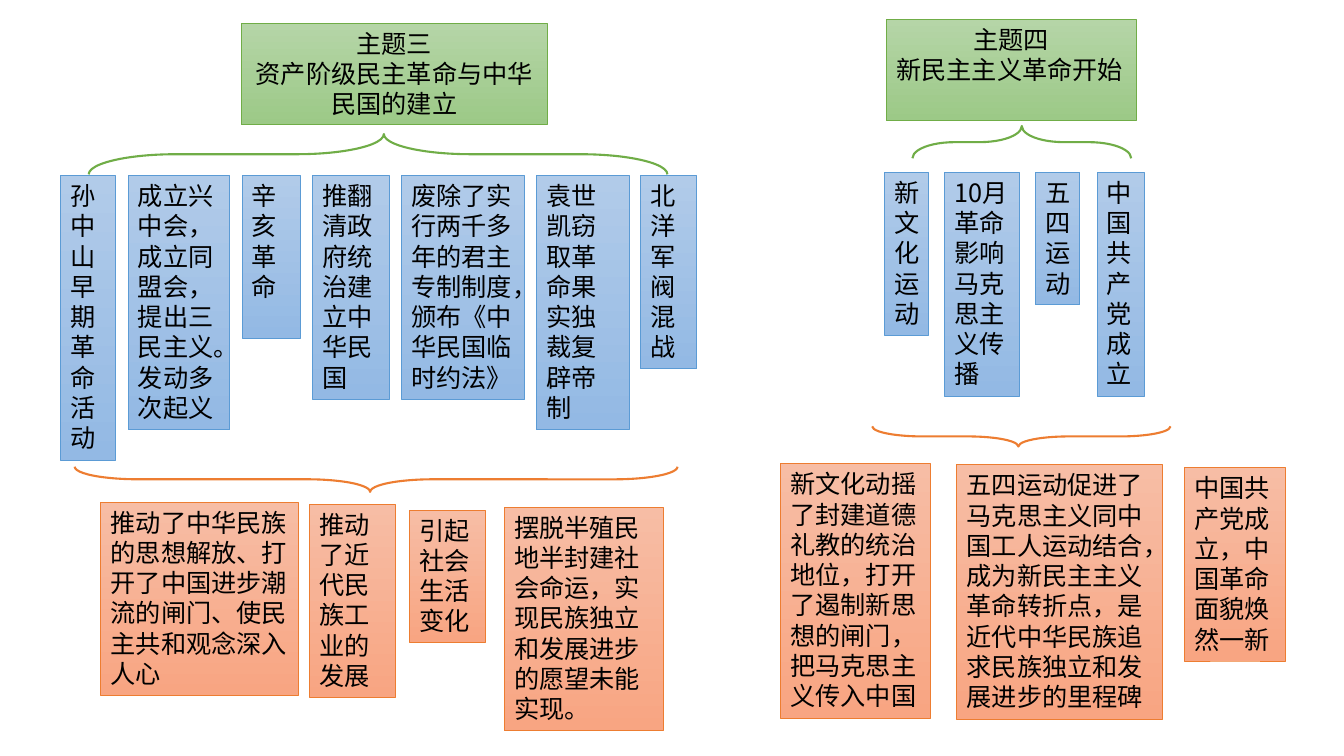
from pptx import Presentation
from pptx.dml.color import RGBColor
from pptx.enum.shapes import MSO_SHAPE as SHAPE
from pptx.enum.text import MSO_ANCHOR as ANCHOR, MSO_AUTO_SIZE as AUTO, PP_ALIGN as ALIGN
from pptx.oxml.ns import qn
from pptx.util import Inches, Pt

FONT = "Noto Sans CJK SC"
LINE_HEIGHT, PADDING = 0.303, 0.1

# Colours: gradient top, gradient bottom, outline
GREEN = ("B5D5A7", "9CC987", "70AD47")
BLUE = ("B1CBE9", "93B9E4", "5B9BD5")
ORANGE = ("F7BDA5", "F8A582", "ED7D31")

# Topics: left, top, width, paragraphs with their alignment
TOPICS = [
    (2.39, 0.23, 3.04, [("主题三", ALIGN.CENTER),
                        ("资产阶级民主革命与中华民国的建立", ALIGN.CENTER)]),
    (8.79, 0.19, 2.48, [("主题四", ALIGN.CENTER),
                        ("新民主主义革命开始", ALIGN.LEFT)]),
]
TOPIC_LINES = 3

# Events, by row top: left, width, height in lines, paragraphs
EVENTS = {
    1.74: [
        (0.6, 0.54, 9, ["孙中山早期革命活动"]),
        (1.27, 1.01, 8, ["成立兴中会，", "成立同盟会，", "提出三民主义。", "发动多次起义"]),
        (2.4, 0.58, 5, ["辛亥革命"]),
        (3.1, 0.76, 7, ["推翻清政府统治建立中华民国"]),
        (3.98, 1.22, 7, ["废除了实行两千多年的君主专制制度，颁布《中华民国临时约法》"]),
        (5.32, 0.92, 8, ["袁世凯窃取革命果实独裁复辟帝制"]),
        (6.35, 0.56, 6, ["北洋军阀混战"]),
    ],
    1.71: [
        (8.77, 0.44, 5, ["新文化运动"]),
        (9.37, 0.74, 7, ["10月革命影响马克思主义传播"]),
        (10.27, 0.44, 4, ["五四运动"]),
        (10.88, 0.47, 7, ["中国共产党成立"]),
    ],
}

# Effects: left, top, width, height in lines, text
EFFECTS = [
    (1, 4.98, 1.96, 6, "推动了中华民族的思想解放、打开了中国进步潮流的闸门、使民主共和观念深入人心"),
    (3.07, 5, 0.85, 6, "推动了近代民族工业的发展"),
    (4.06, 5.06, 0.75, 4, "引起社会生活变化"),
    (5, 5.03, 1.58, 7, "摆脱半殖民地半封建社会命运，实现民族独立和发展进步的愿望未能实现。"),
    (7.74, 4.6, 1.49, 8, "新文化动摇了封建道德礼教的统治地位，打开了遏制新思想的闸门，把马克思主义传入中国"),
    (9.49, 4.61, 2.04, 8, "五四运动促进了马克思主义同中国工人运动结合，成为新民主主义革命转折点，"
                          "是近代中华民族追求民族独立和发展进步的里程碑"),
    (11.75, 4.64, 1, 6, "中国共产党成立，中国革命面貌焕然一新"),
]

# Braces as seen: left, top, length, depth, rotation, curve, tip position, palette
BRACES = [
    (0.88, 1.33, 5.74, 0.4, 270, 2.16, 0.51, GREEN),
    (9.05, 1.25, 2.17, 0.32, 270, 1.31, 0.5, GREEN),
    (0.74, 4.63, 5.98, 0.25, 90, 2.5, 0.51, ORANGE),
    (8.65, 4.23, 2.96, 0.2, 90, 2.5, 0.51, ORANGE),
]


def rgb(value):
    return RGBColor.from_string(value)


def add_box(slide, left, top, width, lines, paragraphs, palette):
    height = PADDING + lines * LINE_HEIGHT
    sp = slide.shapes.add_shape(SHAPE.RECTANGLE, Inches(left), Inches(top),
                                Inches(width), Inches(height))
    sp.shadow.inherit = False
    sp.fill.gradient()
    sp.fill.gradient_angle = 270
    for stop, color in zip(sp.fill.gradient_stops, palette):
        stop.color.rgb = rgb(color)
    sp.line.color.rgb = rgb(palette[2])
    sp.line.width = Pt(0.5)

    tf = sp.text_frame
    tf.word_wrap = True
    tf.auto_size = AUTO.NONE
    tf.vertical_anchor = ANCHOR.TOP
    for i, (text, alignment) in enumerate(paragraphs):
        p = tf.add_paragraph() if i else tf.paragraphs[0]
        p.alignment = alignment
        r = p.add_run()
        r.text = text
        r.font.name = FONT
        r.font.size = Pt(18)
        r.font.color.rgb = rgb("000000")
        # East Asian typeface
        ea = r.font._element.makeelement(qn("a:ea"), {"typeface": FONT})
        r.font._element.find(qn("a:latin")).addnext(ea)


def add_brace(slide, left, top, length, depth, rotation, curve, tip, palette):
    # The frame is upright before it turns about its centre
    shift = (length - depth) / 2
    sp = slide.shapes.add_shape(SHAPE.RIGHT_BRACE, Inches(left + shift), Inches(top - shift),
                                Inches(depth), Inches(length))
    sp.rotation = rotation
    sp.adjustments[0] = curve
    sp.adjustments[1] = tip
    sp.shadow.inherit = False
    sp.fill.background()
    sp.line.color.rgb = rgb(palette[2])
    sp.line.width = Pt(1.5)


def main():
    prs = Presentation()
    prs.slide_width, prs.slide_height = Inches(13.33), Inches(7.5)
    slide = prs.slides.add_slide(prs.slide_layouts[6])

    # Topics
    for left, top, width, paragraphs in TOPICS:
        add_box(slide, left, top, width, TOPIC_LINES, paragraphs, GREEN)

    # Events
    for top, row in EVENTS.items():
        for left, width, lines, texts in row:
            paragraphs = [(text, ALIGN.LEFT) for text in texts]
            add_box(slide, left, top, width, lines, paragraphs, BLUE)

    # Effects
    for left, top, width, lines, text in EFFECTS:
        add_box(slide, left, top, width, lines, [(text, ALIGN.LEFT)], ORANGE)

    # Braces
    for brace in BRACES:
        add_brace(slide, *brace)

    prs.save("out.pptx")


if __name__ == "__main__":
    main()
